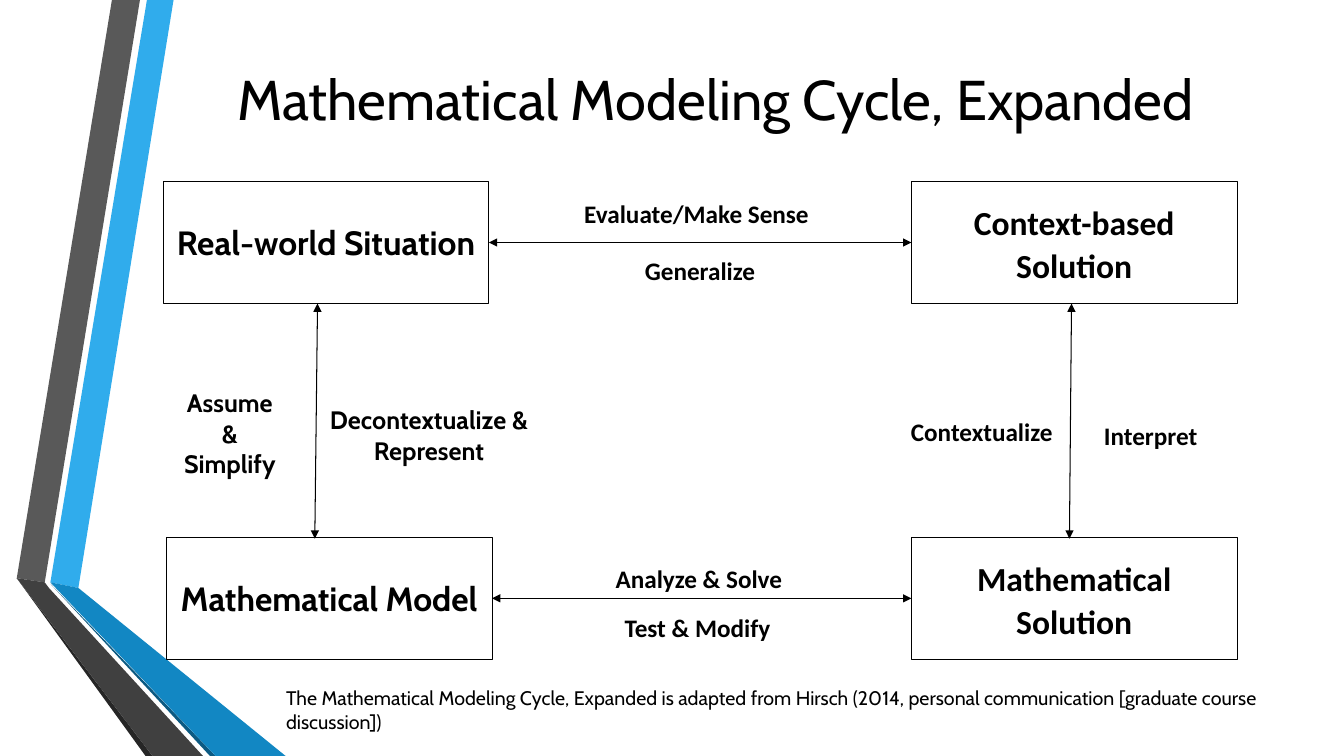
from lxml.etree import SubElement
from pptx import Presentation
from pptx.dml.color import RGBColor
from pptx.enum.shapes import MSO_CONNECTOR, MSO_SHAPE
from pptx.enum.text import MSO_ANCHOR, PP_ALIGN
from pptx.oxml.ns import qn
from pptx.util import Pt

THEME = {
    "ink": "000000", "sky": "30ACEC", "gray": "595959", "soot": "262626",
    "navy": "0C5A82", "blue": "1287C3", "coal": "404040",
    "cabin": "Cabin", "lato": "Calibri",
    "title": 40, "box": 24, "label": 18, "note": 14,
    "edge": 0.5, "arrow": 0.75,
}

# Content: ribbons as colour and outline points
RIBBONS = [
    ("sky", [(36, 416.2), (55.6, 420), (124.4, 0), (104.6, 0)]),
    ("gray", [(100, 0), (79.8, 0), (11.7, 412.6), (31.8, 415.6)]),
    ("soot", [(11.7, 412.6), (104.4, 540), (108.7, 540)]),
    ("navy", [(36, 416.6), (149.8, 540), (154.1, 540)]),
    ("blue", [(36, 416.2), (154.1, 540), (203.8, 540), (55.6, 420)]),
    ("coal", [(145.2, 540), (34.6, 420), (31.5, 415.6), (11.7, 412.6),
              (108.7, 540)]),
]
TITLE = "Mathematical Modeling Cycle, Expanded"
NOTE = ("The Mathematical Modeling Cycle, Expanded is adapted from Hirsch "
        "(2014, personal communication [graduate course discussion])")

# Boxes: text, left, row, font, space after
BOXES = {
    "real": ("Real-world Situation", 116.6, 0, "cabin", 0),
    "answer": ("Mathematical Solution", 651, 1, "lato", 8),
    "model": ("Mathematical Model", 118.8, 1, "cabin", 0),
    "context": ("Context-based Solution", 651, 0, "lato", 0),
}
ROWS = (129.6, 383.8)
SIZE = (232.6, 87.2)
LINKS = [("real", "context"), ("model", "answer")]
DROPS = [(226.8, 224.9), (765.4, 763.9)]

# Labels: lines, place, font
LABELS = [
    (["Generalize"], (435.6, 177.1, 128.9, 30.2), "lato"),
    (["Test & Modify"], (417.6, 430.6, 161.3, 33.1), "lato"),
    (["Analyze & Solve"], (414, 397.4, 170.6, 30.2), "lato"),
    (["Assume", "&", "Simplify"], (103.7, 272.9, 121, 72.7), "cabin"),
    (["Decontextualize &", "Represent"], (225.4, 272.9, 162, 75.6), "cabin"),
    (["Evaluate/Make Sense"], (383.8, 136.8, 227.5, 30.2), "lato"),
    (["Interpret"], (763.9, 293.8, 115.9, 33.1), "lato"),
    (["Contextualize"], (625.7, 290.9, 151.2, 33.1), "lato"),
]


def hue(name):
    return RGBColor.from_string(THEME[name])


def write(shape, lines, size, font, bold=True, after=0,
          align=PP_ALIGN.CENTER, anchor=MSO_ANCHOR.MIDDLE):
    frame = shape.text_frame
    frame.word_wrap = True
    frame.vertical_anchor = anchor
    for i, line in enumerate(lines):
        para = frame.add_paragraph() if i else frame.paragraphs[0]
        para.alignment = align
        if font == "lato":
            para.line_spacing = 1.07
        para.space_after = Pt(after)
        run = para.add_run()
        run.text = line
        run.font.name = THEME[font]
        run.font.size = Pt(THEME[size])
        run.font.bold = bold
        run.font.color.rgb = hue("ink")


def label(slide, place, lines, size, font, **style):
    box = slide.shapes.add_textbox(*map(Pt, place))
    write(box, lines, size, font, **style)


def arrow(slide, start, end):
    link = slide.shapes.add_connector(
        MSO_CONNECTOR.STRAIGHT, *map(Pt, start + end))
    link.line.color.rgb = hue("ink")
    link.line.width = Pt(THEME["arrow"])
    line = link.line._get_or_add_ln()
    for tip in ("a:headEnd", "a:tailEnd"):
        SubElement(line, qn(tip), type="triangle")
    SubElement(link._element.spPr, qn("a:effectLst"))
    return link


def main():
    deck = Presentation()
    deck.slide_width, deck.slide_height = Pt(960), Pt(540)
    slide = deck.slides.add_slide(deck.slide_layouts[6])

    # Ribbons
    for color, dots in RIBBONS:
        pen = slide.shapes.build_freeform(*dots[0], scale=Pt(1))
        pen.add_line_segments(dots[1:], close=True)
        band = pen.convert_to_shape()
        band.shadow.inherit = False
        band.fill.solid()
        band.fill.fore_color.rgb = hue(color)
        band.line.fill.background()

    # Title
    label(slide, (116.6, 33.8, 789.1, 72.7), [TITLE], "title", "cabin",
          bold=False)

    # Boxes
    boxes = {}
    for key, (text, left, row, font, after) in BOXES.items():
        box = slide.shapes.add_shape(
            MSO_SHAPE.RECTANGLE, *map(Pt, (left, ROWS[row]) + SIZE))
        box.shadow.inherit = False
        box.fill.background()
        box.line.color.rgb = hue("ink")
        box.line.width = Pt(THEME["edge"])
        write(box, [text], "box", font, after=after)
        boxes[key] = box

    # Arrows across, joined to the boxes
    for left, right in LINKS:
        link = arrow(slide, (0, 0), (0, 0))
        link.begin_connect(boxes[left], 3)
        link.end_connect(boxes[right], 1)

    # Arrows down
    for top, foot in DROPS:
        arrow(slide, (top, ROWS[0] + SIZE[1]), (foot, ROWS[1] + 1))

    # Labels and source note
    for lines, place, font in LABELS:
        label(slide, place, lines, "label", font,
              after=8 if font == "lato" else 0)
    label(slide, (197.3, 486.7, 708.5, 41), [NOTE], "note", "cabin",
          bold=False, align=PP_ALIGN.LEFT, anchor=MSO_ANCHOR.TOP)

    deck.save("out.pptx")


if __name__ == "__main__":
    main()
